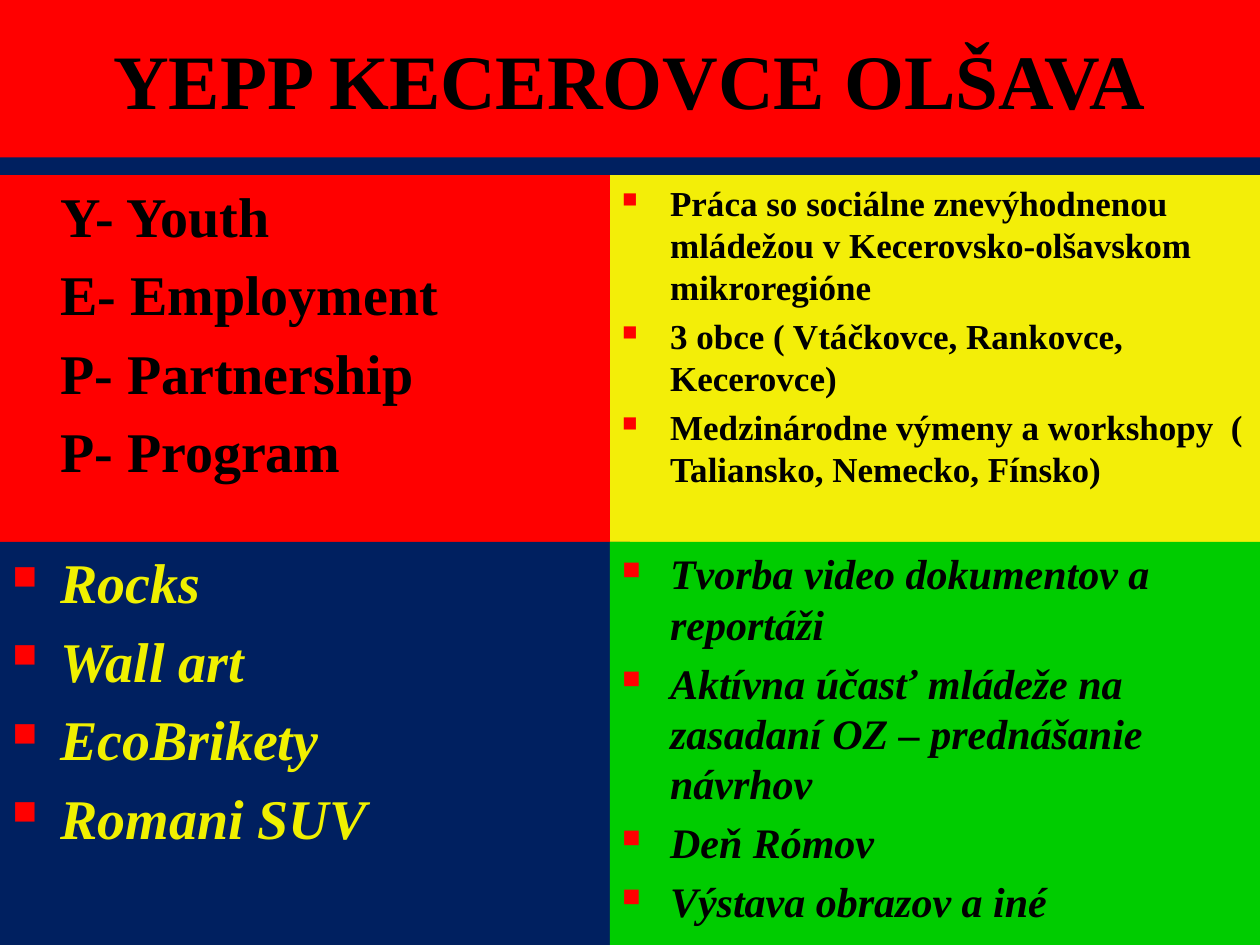
import dataclasses

import pptx
import pptx.dml.color
import pptx.enum.shapes
import pptx.enum.text
import pptx.oxml
import pptx.oxml.ns
import pptx.util
from pptx.shapes.autoshape import Shape
from pptx.slide import Slide

WIDTH, HEIGHT = 10, 7.5
FONT = "Times New Roman"
RED, NAVY, YELLOW, GREEN = "FF0000", "002060", "F3EE08", "00CC00"
BLACK, LEMON = "000000", "F0F000"
SPLIT = 4.84
TITLE_BOTTOM, UPPER_TOP, LOWER_TOP = 1.25, 1.39, 4.3
INDENT = 0.38


@dataclasses.dataclass
class Panel:
    left: float
    top: float
    right: float
    bottom: float
    fill: str
    size: int
    lines: list[str]
    color: str = BLACK
    italic: bool = False
    bulleted: bool = True


def rgb(value: str) -> pptx.dml.color.RGBColor:
    return pptx.dml.color.RGBColor.from_string(value)


def add_bullet(paragraph) -> None:
    properties = paragraph._p.get_or_add_pPr()
    properties.set("marL", str(pptx.util.Inches(INDENT)))
    properties.set("indent", str(-pptx.util.Inches(INDENT)))
    namespace = pptx.oxml.ns.nsdecls("a")
    for element in (
        f'<a:buClr {namespace}><a:srgbClr val="{RED}"/></a:buClr>',
        f'<a:buSzPct {namespace} val="60000"/>',
        f'<a:buChar {namespace} char="■"/>',
    ):
        properties.append(pptx.oxml.parse_xml(element))


def write(paragraph, text: str, *, size: int, color: str, italic: bool) -> None:
    run = paragraph.add_run()
    run.text = text
    run.font.name = FONT
    run.font.size = pptx.util.Pt(size)
    run.font.bold = True
    run.font.italic = italic
    run.font.color.rgb = rgb(color)


def draw_panel(slide: Slide, panel: Panel) -> Shape:
    box = slide.shapes.add_shape(
        pptx.enum.shapes.MSO_SHAPE.RECTANGLE,
        pptx.util.Inches(panel.left),
        pptx.util.Inches(panel.top),
        pptx.util.Inches(panel.right - panel.left),
        pptx.util.Inches(panel.bottom - panel.top),
    )
    box.shadow.inherit = False
    box.fill.solid()
    box.fill.fore_color.rgb = rgb(panel.fill)
    box.line.fill.background()
    frame = box.text_frame
    frame.word_wrap = True
    anchors = pptx.enum.text.MSO_ANCHOR
    frame.vertical_anchor = anchors.TOP if panel.bulleted else anchors.MIDDLE
    for index, line in enumerate(panel.lines):
        paragraph = frame.add_paragraph() if index else frame.paragraphs[0]
        if panel.bulleted:
            paragraph.alignment = pptx.enum.text.PP_ALIGN.LEFT
            paragraph.space_before = pptx.util.Pt(panel.size * 0.2)
            add_bullet(paragraph)
        else:
            paragraph.alignment = pptx.enum.text.PP_ALIGN.CENTER
        write(paragraph, line, size=panel.size, color=panel.color, italic=panel.italic)
    return box


PANELS = [
    Panel(0, 0, WIDTH, TITLE_BOTTOM, RED, 44, ["YEPP KECEROVCE OLŠAVA"], bulleted=False),
    Panel(SPLIT, UPPER_TOP, WIDTH, LOWER_TOP, YELLOW, 20, [
        "Práca so sociálne znevýhodnenou mládežou v Kecerovsko-olšavskom mikroregióne",
        "3 obce ( Vtáčkovce, Rankovce, Kecerovce)",
        "Medzinárodne výmeny a workshopy  ( Taliansko, Nemecko, Fínsko)",
    ]),
    Panel(0, UPPER_TOP, SPLIT, LOWER_TOP, RED, 32, [
        "Y- Youth", "E- Employment", "P- Partnership", "P- Program",
    ]),
    Panel(0, LOWER_TOP, WIDTH / 2, HEIGHT, NAVY, 32, [
        "Rocks", "Wall art", "EcoBrikety", "Romani SUV",
    ], color=LEMON, italic=True),
    Panel(SPLIT, LOWER_TOP, WIDTH, HEIGHT, GREEN, 24, [
        "Tvorba video dokumentov a reportáži",
        "Aktívna účasť mládeže na zasadaní OZ – prednášanie návrhov",
        "Deň Rómov",
        "Výstava obrazov a iné",
    ], italic=True),
]


def main() -> None:
    deck = pptx.Presentation()
    deck.slide_width = pptx.util.Inches(WIDTH)
    deck.slide_height = pptx.util.Inches(HEIGHT)
    slide = deck.slides.add_slide(deck.slide_layouts[6])
    slide.background.fill.solid()
    slide.background.fill.fore_color.rgb = rgb(NAVY)
    for panel in PANELS:
        draw_panel(slide, panel)
    deck.save("out.pptx")


if __name__ == "__main__":
    main()
